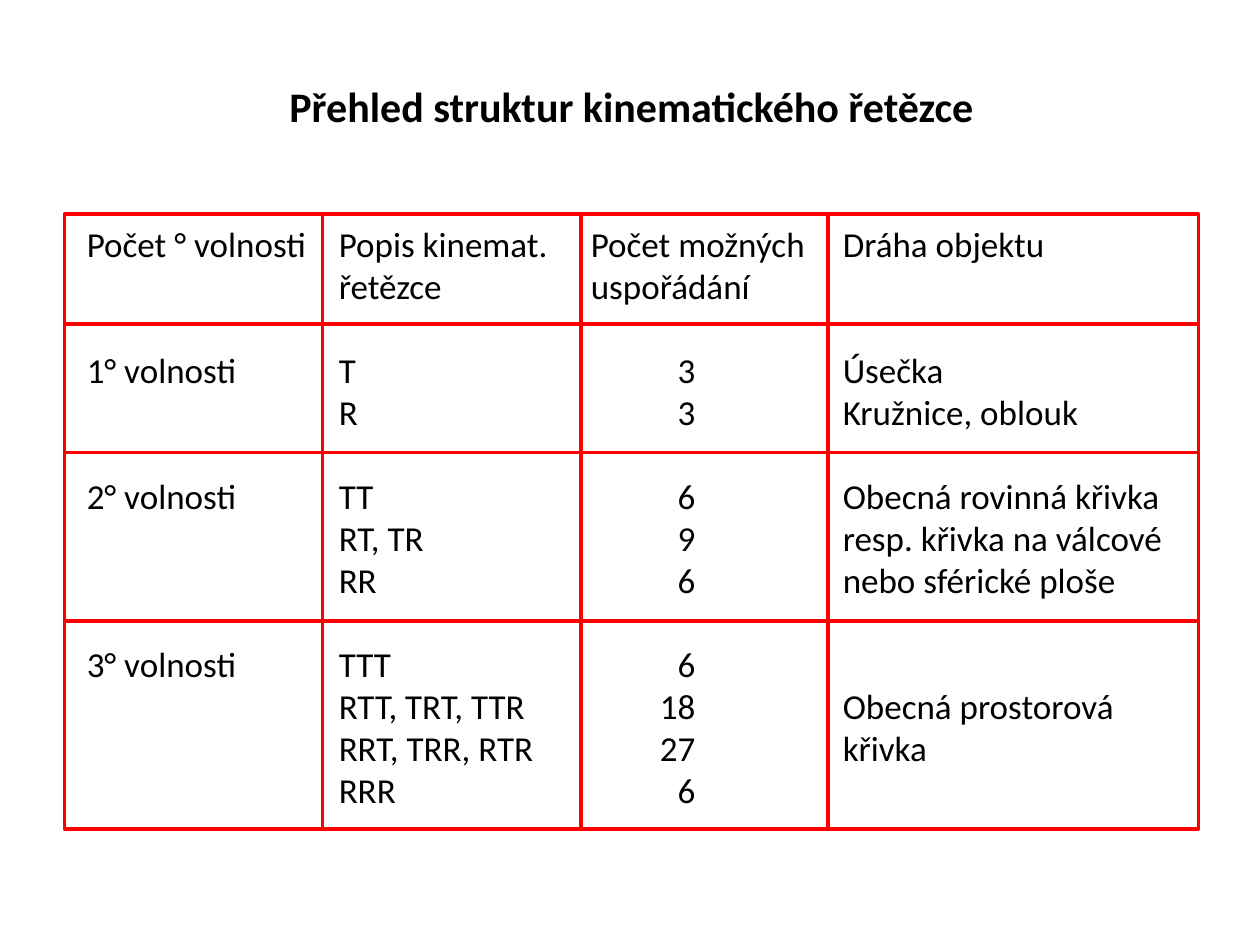
"""Build the overview slide of kinematic chain structures."""
import enum

import lxml.etree
import pptx
import pptx.dml.color
import pptx.enum.shapes
import pptx.enum.text
import pptx.oxml.ns
import pptx.util

Cm, Pt = pptx.util.Cm, pptx.util.Pt
Color = pptx.dml.color.RGBColor


class Theme(enum.Enum):
    FONT = "Calibri"
    INK = "000000"
    RULE = "FF0000"
    TITLE_SIZE = 24
    BODY_SIZE = 20
    LINE_PITCH = 24
    RULE_WIDTH = 2


def format_paragraph(paragraph, size, bold, alignment):
    paragraph.alignment = alignment
    looks = {"name": Theme.FONT.value, "size": Pt(size.value), "bold": bold}
    for run in paragraph.runs:
        for attribute, value in looks.items():
            setattr(run.font, attribute, value)
        run.font.color.rgb = Color.from_string(Theme.INK.value)


def set_tab_stops(paragraph, stops):
    properties = paragraph._p.get_or_add_pPr()
    tab_list = lxml.etree.SubElement(properties, pptx.oxml.ns.qn("a:tabLst"))
    for position, alignment in stops:
        lxml.etree.SubElement(tab_list, pptx.oxml.ns.qn("a:tab"), pos=str(Cm(position)), algn=alignment)


presentation = pptx.Presentation()
presentation.slide_width, presentation.slide_height = Cm(25.4), Cm(19.05)
slide = presentation.slides.add_slide(presentation.slide_layouts[6])

heading = slide.shapes.add_textbox(Cm(1.3), Cm(1.13), Cm(22.86), Cm(2)).text_frame
heading.word_wrap = True
heading.vertical_anchor = pptx.enum.text.MSO_ANCHOR.MIDDLE
heading.text = "Přehled struktur kinematického řetězce"
format_paragraph(heading.paragraphs[0], Theme.TITLE_SIZE, True, pptx.enum.text.PP_ALIGN.CENTER)

structures = [
    ["Počet ° volnosti\tPopis kinemat.\tPočet možných\tDráha objektu",
     "\třetězce\tuspořádání"],
    ["1° volnosti\tT\t3\tÚsečka",
     "\tR\t3\tKružnice, oblouk"],
    ["2° volnosti\tTT\t6\tObecná rovinná křivka",
     "\tRT, TR\t9\tresp. křivka na válcové",
     "\tRR\t6\tnebo sférické ploše"],
    ["3° volnosti\tTTT\t6",
     "\tRTT, TRT, TTR\t18\tObecná prostorová",
     "\tRRT, TRR, RTR\t27\tkřivka",
     "\tRRR\t6"],
]
header_stops = [(5.08, "l"), (10.16, "l"), (15.24, "l")]
count_stops = [(5.08, "l"), (12.27, "r"), (15.24, "l")]

overview = slide.shapes.add_textbox(Cm(1.5), Cm(4.32), Cm(22.66), Cm(12.22)).text_frame
frame_format = {"word_wrap": True, "margin_left": Cm(0.25), "margin_right": Cm(0.25),
                "margin_top": Cm(0.17), "margin_bottom": Cm(0.13)}
for attribute, value in frame_format.items():
    setattr(overview, attribute, value)
overview.text = "\n".join(line for group in structures for line in group)

paragraphs = iter(overview.paragraphs)
for group_index, group in enumerate(structures):
    for line_index in range(len(group)):
        line = next(paragraphs)
        starts_group = group_index > 0 and line_index == 0
        line.line_spacing = Pt(Theme.LINE_PITCH.value)
        line.space_before = Pt(Theme.LINE_PITCH.value if starts_group else 0)
        format_paragraph(line, Theme.BODY_SIZE, False, pptx.enum.text.PP_ALIGN.LEFT)
        set_tab_stops(line, count_stops if group_index else header_stops)

left, top, right, bottom = 1.3, 4.32, 24.16, 16.71
border = slide.shapes.add_shape(
    pptx.enum.shapes.MSO_SHAPE.RECTANGLE, Cm(left), Cm(top), Cm(right - left), Cm(bottom - top))
border.shadow.inherit = False
border.fill.background()

row_rules = [(left, y, right, y) for y in (6.53, 12.52, 9.12)]
column_rules = [(x, top, x, bottom) for x in (6.5, 16.69, 11.71)]
rules = [border]
for ends in row_rules + column_rules:
    rule = slide.shapes.add_connector(
        pptx.enum.shapes.MSO_CONNECTOR.STRAIGHT, *(Cm(length) for length in ends))
    rules.append(rule)
for rule in rules:
    rule.line.color.rgb = Color.from_string(Theme.RULE.value)
    rule.line.width = Pt(Theme.RULE_WIDTH.value)
for rule in rules[1:]:
    lxml.etree.SubElement(rule._element.spPr, pptx.oxml.ns.qn("a:effectLst"))

presentation.save("out.pptx")
